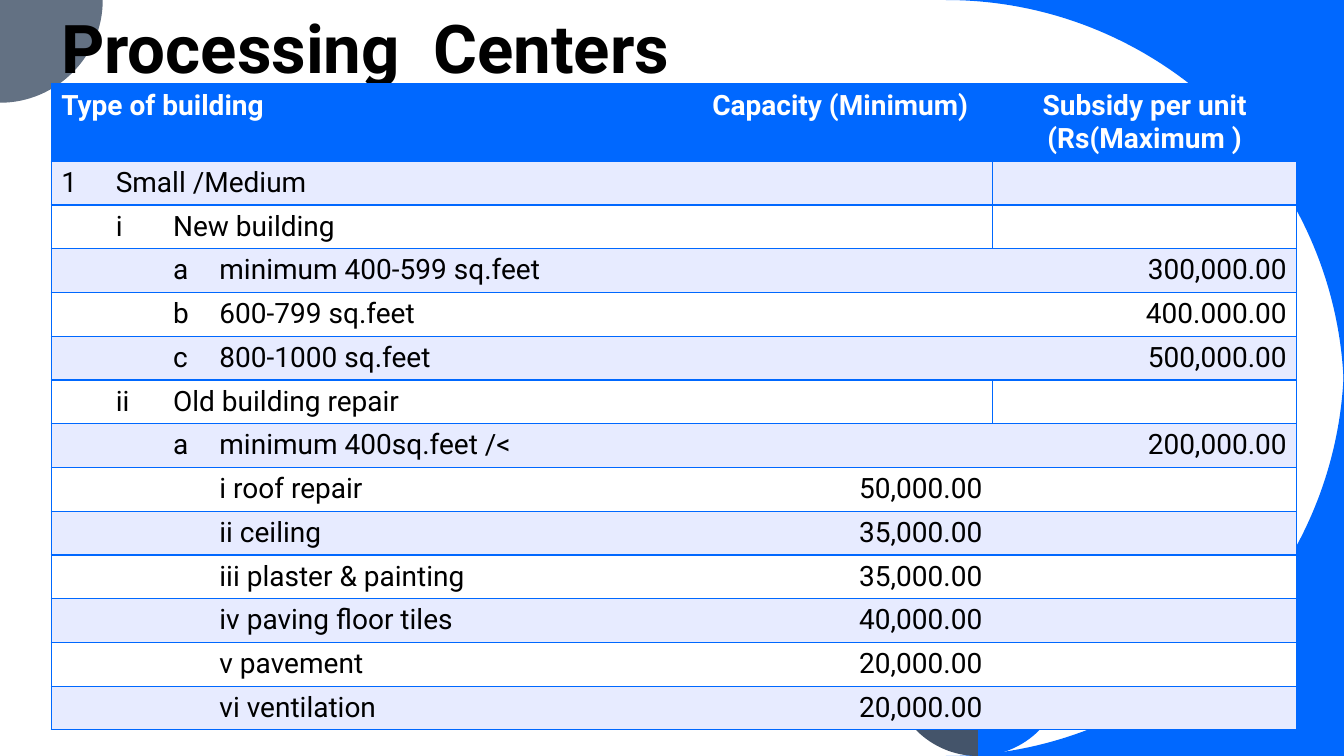
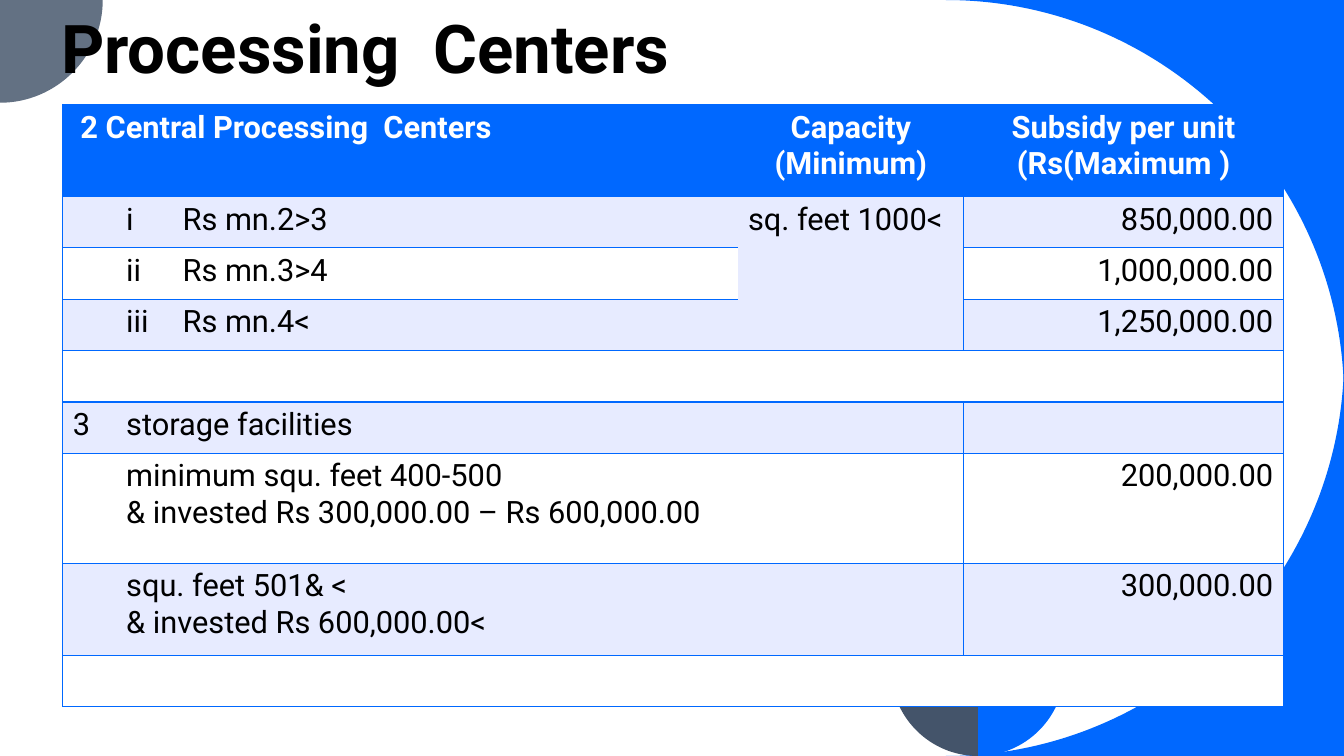
from lxml.etree import SubElement
from pptx import Presentation
from pptx.dml.color import RGBColor
from pptx.enum.text import MSO_ANCHOR, PP_ALIGN
from pptx.oxml.ns import qn
from pptx.util import Pt

W, H = 960, 540
FONT = "Roboto"
TITLE = "Processing  Centers"
NO_STYLE = "{2D5ABB26-0587-4C30-8999-92F81FD0307C}"
C = {"blue": "0068FF", "band": "E7EBFF", "white": "FFFFFF", "black": "000000",
     "grey": "637183", "slate": "44546A"}
ALIGN = {"l": PP_ALIGN.LEFT, "c": PP_ALIGN.CENTER, "r": PP_ALIGN.RIGHT}


def add_outline(s, color, start, steps):
    fb = s.shapes.build_freeform(Pt(start[0]), Pt(start[1]))
    fb.add_line_segments([(Pt(x), Pt(y)) for (x, y), corner in steps])
    sp = fb.convert_to_shape()
    sp.shadow.inherit = False
    sp.fill.solid()
    sp.fill.fore_color.rgb = RGBColor.from_string(C[color])
    sp.line.fill.background()
    here = start
    for seg, (end, corner) in zip(list(sp._element.iter(qn("a:lnTo"))), steps):
        if corner:
            pulls = [[a + 0.55 * (b - a) for a, b in zip(point, corner)]
                     for point in (here, end)]
            seg.tag = qn("a:cubicBezTo")
            seg.remove(seg[0])
            for x, y in pulls + [end]:
                SubElement(seg, qn("a:pt"), x=str(Pt(x) - sp.left),
                           y=str(Pt(y) - sp.top))
        here = end


def add_run(p, text, size, color, bold):
    r = p.add_run()
    r.text = text
    r.font.name = FONT
    r.font.size = Pt(size)
    r.font.bold = bold
    r.font.color.rgb = RGBColor.from_string(C[color])


R, DISC, PETAL, MID = 284.4, 73.4, 62, 698.4
INNER = 502
# Each step is an end point and, for a curve, the corner it bends towards.
decor = [
    ("blue", (W, 0), [((W - R, 0), None), ((W, R), (W, 0)), ((W, 0), None)]),
    ("blue", (W, H - R), [((W - R, H), (W, H)), ((W, H), None),
                          ((W, H - R), None)]),
    ("grey", (0, 0), [((DISC, 0), None), ((0, DISC), (DISC, DISC)),
                      ((0, 0), None)]),
]
for color, tip in (("blue", MID + PETAL), ("slate", MID - PETAL)):
    decor.append((color, (tip, INNER - PETAL), [
        ((tip, H - PETAL), None),
        ((MID, H), (tip, H)),
        ((MID, INNER), None),
        ((tip, INNER - PETAL), (MID, INNER - PETAL)),
    ]))

# None joins the cell to its left, "^" joins it to the cell above.
pages = [
    {
        "at": (36.6, 60), "size": 20, "title_on_top": False,
        "cols": [38.9, 41, 33.1, 342, 217.4, 217.4],
        "heights": [54.5] + [30.7] * 13,
        "align": "llllrr",
        "rows": [
            ["Type of building", None, None, None, "Capacity (Minimum)",
             "Subsidy per unit (Rs(Maximum )"],
            ["1", "Small /Medium", None, None, "", ""],
            ["", "i", "New building", None, "", ""],
            ["", "", "a", "minimum 400-599 sq.feet", "", "300,000.00"],
            ["", "", "b", "600-799 sq.feet", "", "400.000.00"],
            ["", "", "c", "800-1000 sq.feet", "", "500,000.00"],
            ["", "ii", "Old building repair", None, "", ""],
            ["", "", "a", "minimum 400sq.feet /<", "", "200,000.00"],
            ["", "", "", "i roof repair", "50,000.00", ""],
            ["", "", "", "ii ceiling", "35,000.00", ""],
            ["", "", "", "iii plaster & painting", "35,000.00", ""],
            ["", "", "", "iv paving floor tiles", "40,000.00", ""],
            ["", "", "", "v pavement", "20,000.00", ""],
            ["", "", "", "vi ventilation", "20,000.00", ""],
        ],
    },
    {
        "at": (44.8, 74.7), "size": 22, "title_on_top": True,
        "cols": [38.2, 40.3, 48.2, 355.7, 161.3, 228.2],
        "heights": [65.7] + [36.7] * 5 + [78.6, 65.7, 36.7],
        "align": "lllllr",
        "rows": [
            [" 2 Central Processing  Centers", None, None, None,
             "Capacity (Minimum)", "Subsidy per unit (Rs(Maximum )"],
            ["", "i", "Rs mn.2>3", None, "sq. feet 1000<", "850,000.00"],
            ["", "ii", "Rs mn.3>4", None, "^", "1,000,000.00"],
            ["", "iii", "Rs mn.4<", None, "^", "1,250,000.00"],
            ["", "", "", "", "", ""],
            ["3", "storage facilities", None, None, "", ""],
            ["", "minimum squ. feet 400-500\n"
             "& invested Rs 300,000.00 – Rs 600,000.00", None, None, "",
             "200,000.00"],
            ["", "squ. feet 501& <\n& invested Rs 600,000.00<", None, None, "",
             "300,000.00"],
            ["", None, None, None, None, None],
        ],
    },
]

prs = Presentation()
prs.slide_width, prs.slide_height = Pt(W), Pt(H)

for page in pages:
    s = prs.slides.add_slide(prs.slide_layouts[6])
    for color, start, steps in decor:
        add_outline(s, color, start, steps)

    title = s.shapes.add_textbox(Pt(36.6), Pt(11.5), Pt(733), Pt(54.7))
    tf = title.text_frame
    tf.word_wrap = True
    tf.vertical_anchor = MSO_ANCHOR.BOTTOM
    p = tf.paragraphs[0]
    p.line_spacing = 0.9
    add_run(p, TITLE, 48, "black", True)

    rows, cols, heights = page["rows"], page["cols"], page["heights"]
    last = len(cols) - 1
    left, top = page["at"]
    frame = s.shapes.add_table(len(rows), len(cols), Pt(left), Pt(top),
                               Pt(sum(cols)), Pt(sum(heights)))
    tbl = frame.table
    tbl._tbl.tblPr.find(qn("a:tableStyleId")).text = NO_STYLE
    for col, width in zip(tbl.columns, cols):
        col.width = Pt(width)
    for row, height in zip(tbl.rows, heights):
        row.height = Pt(height)

    for i, row in enumerate(rows):
        divided = i > 0 and None in row and row[last] is not None
        fill = "blue" if i == 0 else "band" if i % 2 else "white"
        for j, text in enumerate(row):
            cell = tbl.cell(i, j)
            right, bottom = j, i
            while right < last and row[right + 1] is None:
                right += 1
            while bottom + 1 < len(rows) and rows[bottom + 1][j] == "^":
                bottom += 1
            if text not in (None, "^") and (right, bottom) != (j, i):
                cell.merge(tbl.cell(bottom, right))

            borders = {"lnL": j == 0 or (divided and j == last),
                       "lnR": right == last,
                       "lnT": text != "^", "lnB": text != "^"}
            tc_pr = cell._tc.get_or_add_tcPr()
            for tag, drawn in borders.items():
                if drawn:
                    ln = SubElement(tc_pr, qn("a:" + tag), w=str(Pt(1)))
                    solid = SubElement(ln, qn("a:solidFill"))
                    SubElement(solid, qn("a:srgbClr"), val=C["blue"])
            cell.fill.solid()
            cell.fill.fore_color.rgb = RGBColor.from_string(C[fill])

            tf = cell.text_frame
            if not text or text == "^":
                end = SubElement(tf.paragraphs[0]._p, qn("a:endParaRPr"),
                                 sz=str(page["size"] * 100))
                SubElement(end, qn("a:latin"), typeface=FONT)
                continue
            align = page["align"][j]
            if i == 0:
                align = "c" if j >= last - 1 else "l"
            for n, line in enumerate(text.split("\n")):
                p = tf.add_paragraph() if n else tf.paragraphs[0]
                p.alignment = ALIGN[align]
                add_run(p, line, page["size"],
                        "white" if i == 0 else "black", i == 0)

    if page["title_on_top"]:
        s.shapes._spTree.append(title._element)

prs.save("out.pptx")
